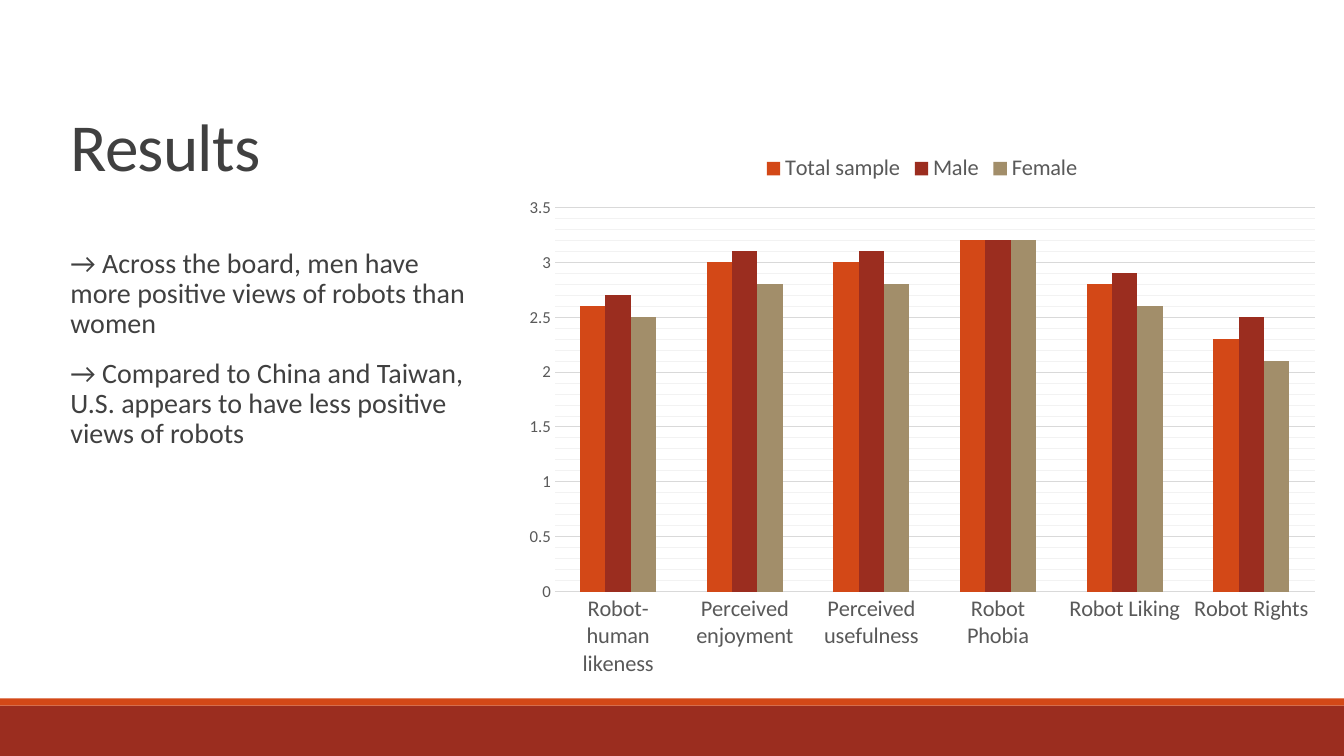
from lxml import etree
from pptx import Presentation
from pptx.chart.data import CategoryChartData
from pptx.dml.color import RGBColor
from pptx.enum.chart import XL_CHART_TYPE, XL_LEGEND_POSITION, XL_TICK_MARK
from pptx.enum.shapes import MSO_SHAPE
from pptx.enum.text import MSO_ANCHOR, MSO_AUTO_SIZE, PP_ALIGN
from pptx.oxml.ns import qn
from pptx.util import Inches, Pt

COLUMNS = XL_CHART_TYPE.COLUMN_CLUSTERED
LEGEND_TOP = XL_LEGEND_POSITION.TOP
NO_TICK = XL_TICK_MARK.NONE
RECTANGLE = MSO_SHAPE.RECTANGLE
BOTTOM, TOP = MSO_ANCHOR.BOTTOM, MSO_ANCHOR.TOP
NO_FIT = MSO_AUTO_SIZE.NONE
LEFT = PP_ALIGN.LEFT

FONT = "Calibri"
ORANGE = RGBColor(0xD3, 0x48, 0x17)
BRICK = RGBColor(0x9B, 0x2D, 0x1F)
SAND = RGBColor(0xA2, 0x8E, 0x6A)
INK = RGBColor(0x40, 0x40, 0x40)
LABEL = RGBColor(0x59, 0x59, 0x59)
GRID = RGBColor(0xD9, 0xD9, 0xD9)
MINOR_GRID = RGBColor(0xF2, 0xF2, 0xF2)

WIDTH, HEIGHT = 13.33, 7.5
MARGIN = 0.6
TITLE_BOTTOM = 1.89
BAND_TOP, STRIPE = 7, 0.07

FINDINGS = [
    "→ Across the board, men have more positive views of robots than women",
    "→ Compared to China and Taiwan, U.S. appears to have less positive views of robots",
]
SCALES = ["Robot-human likeness", "Perceived enjoyment", "Perceived usefulness",
          "Robot Phobia", "Robot Liking", "Robot Rights"]
GROUPS = [
    ("Total sample", ORANGE, (2.6, 3, 3, 3.2, 2.8, 2.3)),
    ("Male", BRICK, (2.7, 3.1, 3.1, 3.2, 2.9, 2.5)),
    ("Female", SAND, (2.5, 2.8, 2.8, 3.2, 2.6, 2.1)),
]


def area(left, top, width, height):
    """Turn a frame in inches into lengths."""
    return [Inches(value) for value in (left, top, width, height)]


def style_font(font, size, color):
    """Set the typeface, size and colour of a font."""
    font.name = FONT
    font.size = Pt(size)
    font.color.rgb = color


def style_line(line, color):
    """Give a chart line its colour and hairline width."""
    line.color.rgb = color
    line.width = Pt(0.75)


def add_band(page, top, height, color):
    """Add a plain strip across the whole page."""
    band = page.shapes.add_shape(RECTANGLE, *area(0, top, WIDTH, height))
    band.shadow.inherit = False
    band.fill.solid()
    band.fill.fore_color.rgb = color
    band.line.fill.background()


def set_title(page, text):
    """Place and format the title placeholder."""
    title = page.shapes.title
    title.left, title.top, title.width, title.height = area(
        MARGIN, 0.3, 12.42, TITLE_BOTTOM - 0.3)
    frame = title.text_frame
    frame.text = text
    frame.vertical_anchor = BOTTOM
    frame.auto_size = NO_FIT
    para = frame.paragraphs[0]
    para.alignment = LEFT
    para.line_spacing = 0.85
    span = para.runs[0]
    style_font(span.font, 48, INK)
    span.font._element.set("spc", "-50")


def add_findings(page, findings):
    """Add the column of findings under the title."""
    box = page.shapes.add_textbox(*area(MARGIN, TITLE_BOTTOM, 4.18, 4.76))
    frame = box.text_frame
    frame.word_wrap = True
    frame.vertical_anchor = TOP
    frame.margin_left, frame.margin_right = Inches(0.1), 0
    frame.margin_top = Inches(0.58)
    frame.text = "\n".join(findings)
    for index, para in enumerate(frame.paragraphs):
        para.line_spacing = 0.9
        para.space_before = Pt(12 if index else 0)
        para.space_after = Pt(2)
        style_font(para.runs[0].font, 20, INK)


def style_minor_gridlines(axis, color):
    """Colour the minor gridlines of an axis."""
    element = axis._element.find(qn("c:minorGridlines"))
    for tag in ("c:spPr", "a:ln", "a:solidFill", "a:srgbClr"):
        element = etree.SubElement(element, qn(tag))
        if tag == "a:ln":
            element.set("w", str(Pt(0.75)))
    element.set("val", str(color))


def format_axes(chart):
    """Format the category axis, the value axis and the gridlines."""
    for axis, size in ((chart.category_axis, 16), (chart.value_axis, 12)):
        axis.major_tick_mark = axis.minor_tick_mark = NO_TICK
        style_font(axis.tick_labels.font, size, LABEL)
    style_line(chart.category_axis.format.line, GRID)
    values = chart.value_axis
    values.format.line.fill.background()
    values.minimum_scale, values.maximum_scale = 0, 3.5
    values.major_unit, values.minor_unit = 0.5, 0.1
    values.has_major_gridlines = values.has_minor_gridlines = True
    style_line(values.major_gridlines.format.line, GRID)
    style_minor_gridlines(values, MINOR_GRID)


def add_score_chart(page):
    """Add the clustered columns of scores by group."""
    data = CategoryChartData(number_format="General")
    data.categories = SCALES
    for name, _, scores in GROUPS:
        data.add_series(name, scores)
    frame = page.shapes.add_chart(COLUMNS, *area(5.09, 1.42, 8.11, 5.41), data)
    chart = frame.chart
    chart.has_title = False
    style_font(chart.font, 10, LABEL)
    chart.has_legend = True
    chart.legend.position = LEGEND_TOP
    chart.legend.include_in_layout = False
    style_font(chart.legend.font, 16, LABEL)
    format_axes(chart)
    plot = chart.plots[0]
    plot.gap_width, plot.overlap = 199, 0
    plot.vary_by_categories = False
    for series, (_, color, _) in zip(plot.series, GROUPS):
        series.invert_if_negative = False
        series.format.fill.solid()
        series.format.fill.fore_color.rgb = color


def main():
    """Build the results slide and save it."""
    deck = Presentation()
    deck.slide_width, deck.slide_height = Inches(WIDTH), Inches(HEIGHT)
    page = deck.slides.add_slide(deck.slide_layouts.get_by_name("Title Only"))
    add_band(page, BAND_TOP, HEIGHT - BAND_TOP, BRICK)
    add_band(page, BAND_TOP - STRIPE, STRIPE, ORANGE)
    set_title(page, "Results")
    add_findings(page, FINDINGS)
    add_score_chart(page)
    deck.save("out.pptx")


if __name__ == "__main__":
    main()
